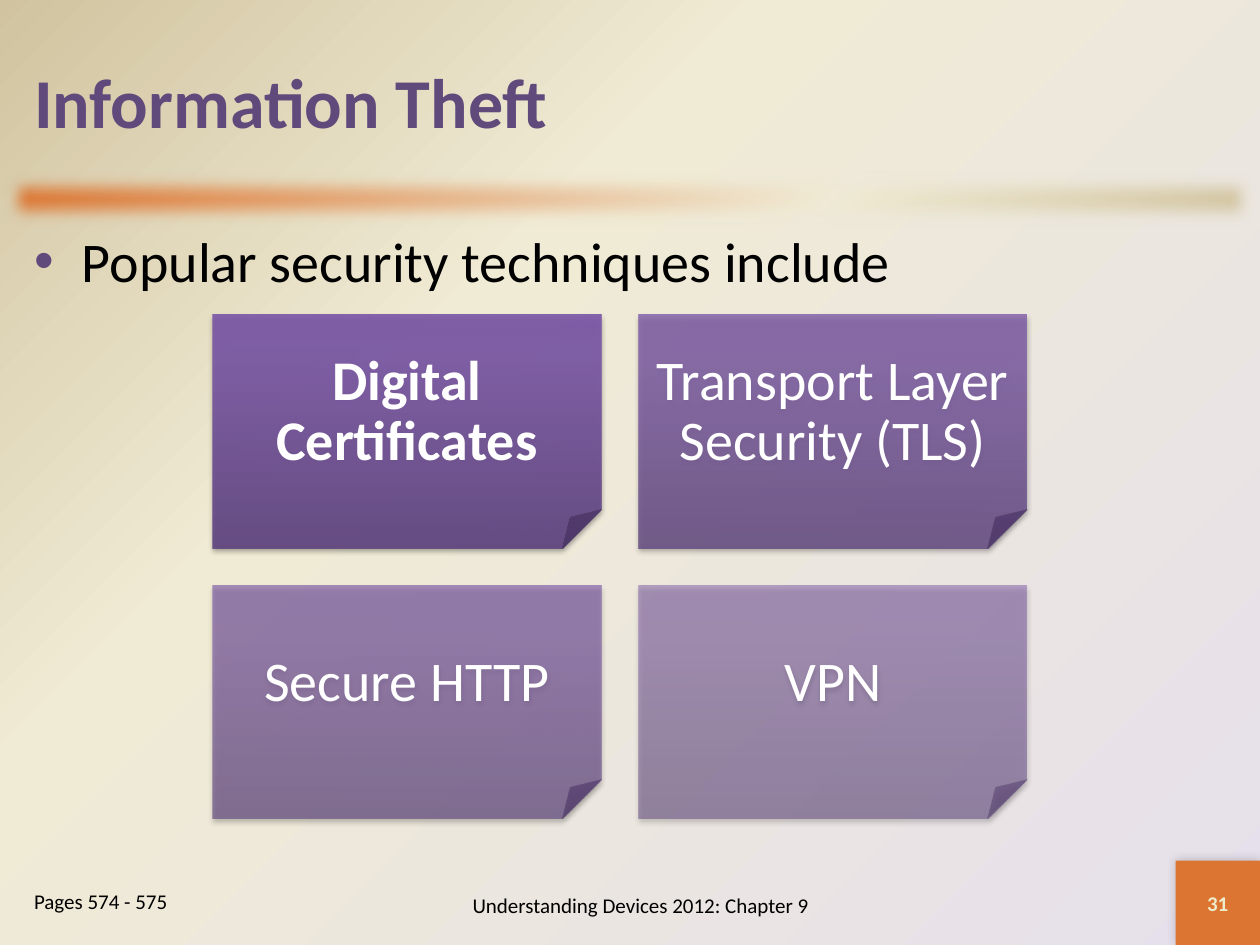
"""Build the Information Theft slide with four security technique cards."""
import pptx
import pptx.dml.color
import pptx.enum.shapes
import pptx.enum.text
import pptx.oxml
import pptx.oxml.ns
import pptx.util

Inches = pptx.util.Inches
Pt = pptx.util.Pt
RGBColor = pptx.dml.color.RGBColor
MSO_SHAPE = pptx.enum.shapes.MSO_SHAPE
MSO_ANCHOR = pptx.enum.text.MSO_ANCHOR
PP_ALIGN = pptx.enum.text.PP_ALIGN
qn = pptx.oxml.ns.qn

PURPLE = RGBColor(0x60, 0x4A, 0x7B)
ORANGE = RGBColor(0xDB, 0x75, 0x31)
LAVENDER = RGBColor(0xE6, 0xE0, 0xEC)
CREAM = RGBColor(0xF0, 0xEB, 0xD5)
TAN = RGBColor(0xD1, 0xC3, 0x9F)
PALE = RGBColor(0xEE, 0xEB, 0xCA)
CARD_DARK = RGBColor(0x5F, 0x44, 0x80)
CARD_MID = RGBColor(0x7B, 0x58, 0xA6)
CARD_LIGHT = RGBColor(0x7C, 0x57, 0xA8)
BLACK = RGBColor(0, 0, 0)
WHITE = RGBColor(255, 255, 255)
NS = 'xmlns:a="http://schemas.openxmlformats.org/drawingml/2006/main"'


def set_gradient(fill, element, stops, direction, alpha=100):
    fill.gradient()
    old = element.find(".//" + qn("a:gradFill"))
    marks = "".join(
        f'<a:gs pos="{pos * 1000}"><a:srgbClr val="{color}">'
        f'<a:alpha val="{alpha * 1000}"/></a:srgbClr></a:gs>'
        for pos, color in stops
    )
    new = pptx.oxml.parse_xml(
        f'<a:gradFill {NS} rotWithShape="1"><a:gsLst>{marks}</a:gsLst>{direction}</a:gradFill>'
    )
    old.getparent().replace(old, new)


def add_box(kind, left, top, width, height, effect):
    sp = s.shapes.add_shape(kind, Inches(left), Inches(top), Inches(width), Inches(height))
    sp.line.fill.background()
    sp.shadow.inherit = False
    effects = sp._element.spPr.find(qn("a:effectLst"))
    effects.append(pptx.oxml.parse_xml(effect))
    return sp


def_shadow = (
    '<a:outerShdw {ns} blurRad="{blur}" dist="{dist}" dir="{angle}" rotWithShape="0">'
    '<a:srgbClr val="000000"><a:alpha val="{alpha}"/></a:srgbClr></a:outerShdw>'
)
corner_shadow = def_shadow.format(ns=NS, blur=Pt(6), dist=0, angle=225 * 60000, alpha=20000)
card_shadow = def_shadow.format(ns=NS, blur=Pt(3.1), dist=Pt(1.8), angle=90 * 60000, alpha=35000)

prs = pptx.Presentation()
prs.slide_width, prs.slide_height = Inches(10), Inches(7.5)
s = prs.slides.add_slide(prs.slide_layouts[3])
set_gradient(
    s.background.fill, s._element, [(0, LAVENDER), (65, CREAM), (100, TAN)],
    '<a:path path="circle"><a:fillToRect l="100000" t="100000"/></a:path>',
)

bar = add_box(MSO_SHAPE.RECTANGLE, 0, 1.33, 10, 0.5, f'<a:softEdge {NS} rad="{Pt(10)}"/>')
set_gradient(
    bar.fill, bar._element, [(0, ORANGE), (65, CREAM), (100, TAN)],
    f'<a:lin ang="{45 * 60000}" scaled="1"/>',
)

number = add_box(MSO_SHAPE.RECTANGLE, 9.33, 6.83, 0.67, 0.67, corner_shadow)
number.fill.solid()
number.fill.fore_color.rgb = ORANGE
footer = s.shapes.add_textbox(Inches(3), Inches(6.91), Inches(4.17), Inches(0.55))
title, body, pages = s.placeholders

texts = [
    (title, "Information Theft", 40, PURPLE, True, PP_ALIGN.LEFT, MSO_ANCHOR.MIDDLE),
    (body, "Popular security techniques include", 32, BLACK, False, PP_ALIGN.LEFT, MSO_ANCHOR.TOP),
    (pages, "Pages 574 - 575", 12, BLACK, False, PP_ALIGN.LEFT, MSO_ANCHOR.TOP),
    (footer, "Understanding Devices 2012: Chapter 9", 12, BLACK, False,
     PP_ALIGN.CENTER, MSO_ANCHOR.MIDDLE),
    (number, "31", 12, PALE, True, PP_ALIGN.CENTER, MSO_ANCHOR.MIDDLE),
]

cards = [
    ("Digital Certificates", 90),
    ("Transport Layer Security (TLS)", 77),
    ("Secure HTTP", 63),
    ("VPN", 50),
]
for i, (text, alpha) in enumerate(cards):
    row, col = divmod(i, 2)
    card = add_box(MSO_SHAPE.FOLDED_CORNER, 1.69 + col * 3.38, 2.5 + row * 2.15,
                   3.08, 1.85, card_shadow)
    set_gradient(
        card.fill, card._element, [(0, CARD_DARK), (80, CARD_MID), (100, CARD_LIGHT)],
        f'<a:lin ang="{270 * 60000}" scaled="0"/>', alpha,
    )
    tf = card.text_frame
    tf.margin_left = tf.margin_right = tf.margin_top = tf.margin_bottom = Inches(0.13)
    tf.paragraphs[0].line_spacing = 0.9
    tf.paragraphs[0].space_after = Pt(11.2)
    texts.append((card, text, 32, WHITE, i == 0, PP_ALIGN.CENTER, MSO_ANCHOR.MIDDLE))

for sp, text, size, color, bold, align, anchor in texts:
    tf = sp.text_frame
    tf.word_wrap = True
    tf.auto_size = pptx.enum.text.MSO_AUTO_SIZE.NONE
    tf.vertical_anchor = anchor
    p = tf.paragraphs[0]
    p.text = text
    p.alignment = align
    font = p.runs[0].font
    font.name, font.size, font.bold = "Calibri", Pt(size), bold
    font.color.rgb = color

for sp, left, top, width, height in [
    (title, 0.17, 0.17, 9.67, 1.25),
    (body, 0.17, 1.75, 9.67, 5.08),
    (pages, 0.17, 7, 1.83, 0.5),
]:
    sp.left, sp.top, sp.width, sp.height = map(Inches, (left, top, width, height))

for sp, marks in [
    (body, [f'<a:buClr {NS}><a:srgbClr val="{PURPLE}"/></a:buClr>',
            f'<a:buFont {NS} typeface="Arial"/>', f'<a:buChar {NS} char="•"/>']),
    (pages, [f'<a:buNone {NS}/>']),
]:
    pPr = sp.text_frame.paragraphs[0]._p.get_or_add_pPr()
    pPr.set("marL", str(Inches(0.38)))
    pPr.set("indent", str(Inches(-0.38)))
    for mark in marks:
        pPr.append(pptx.oxml.parse_xml(mark))

prs.save("out.pptx")
